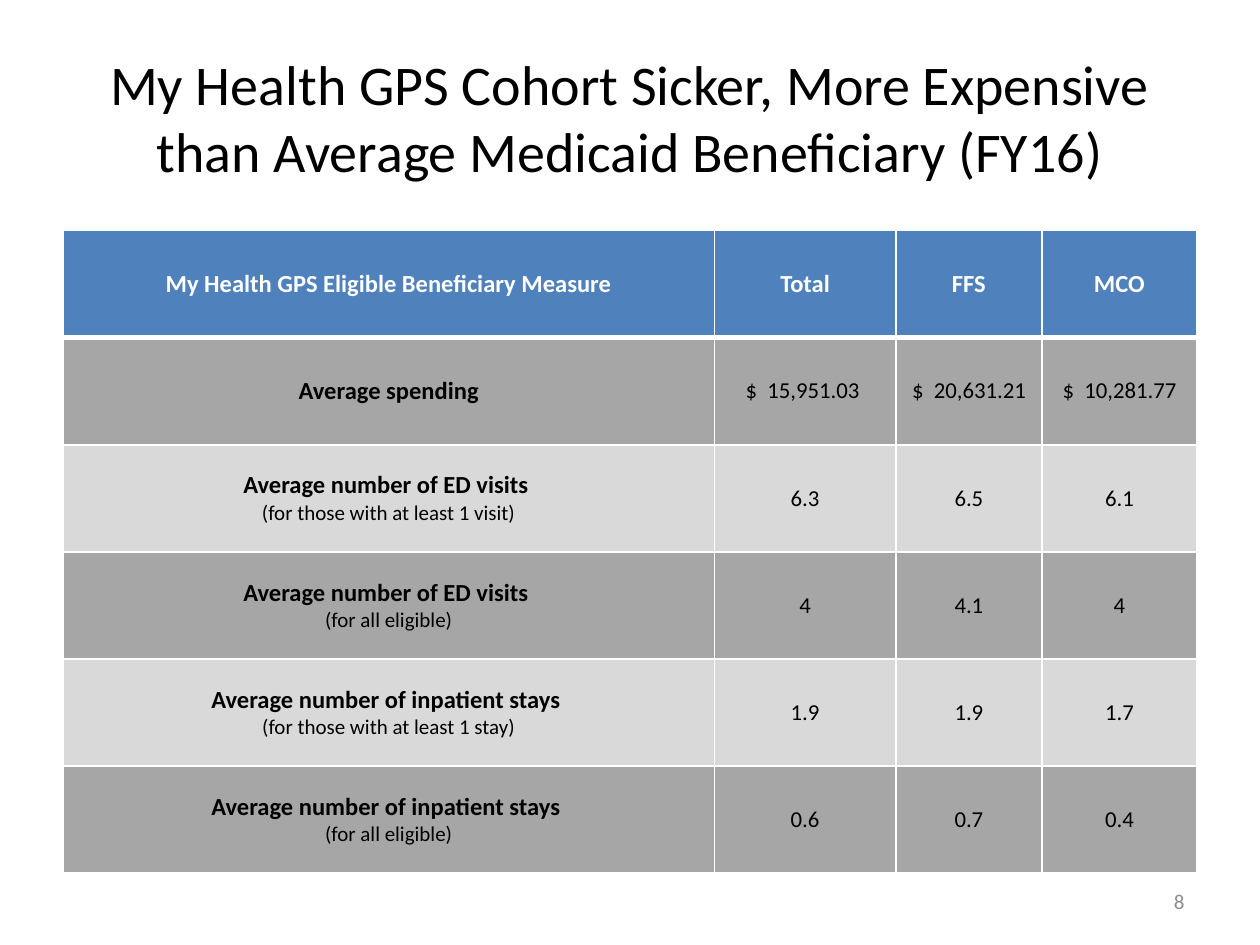
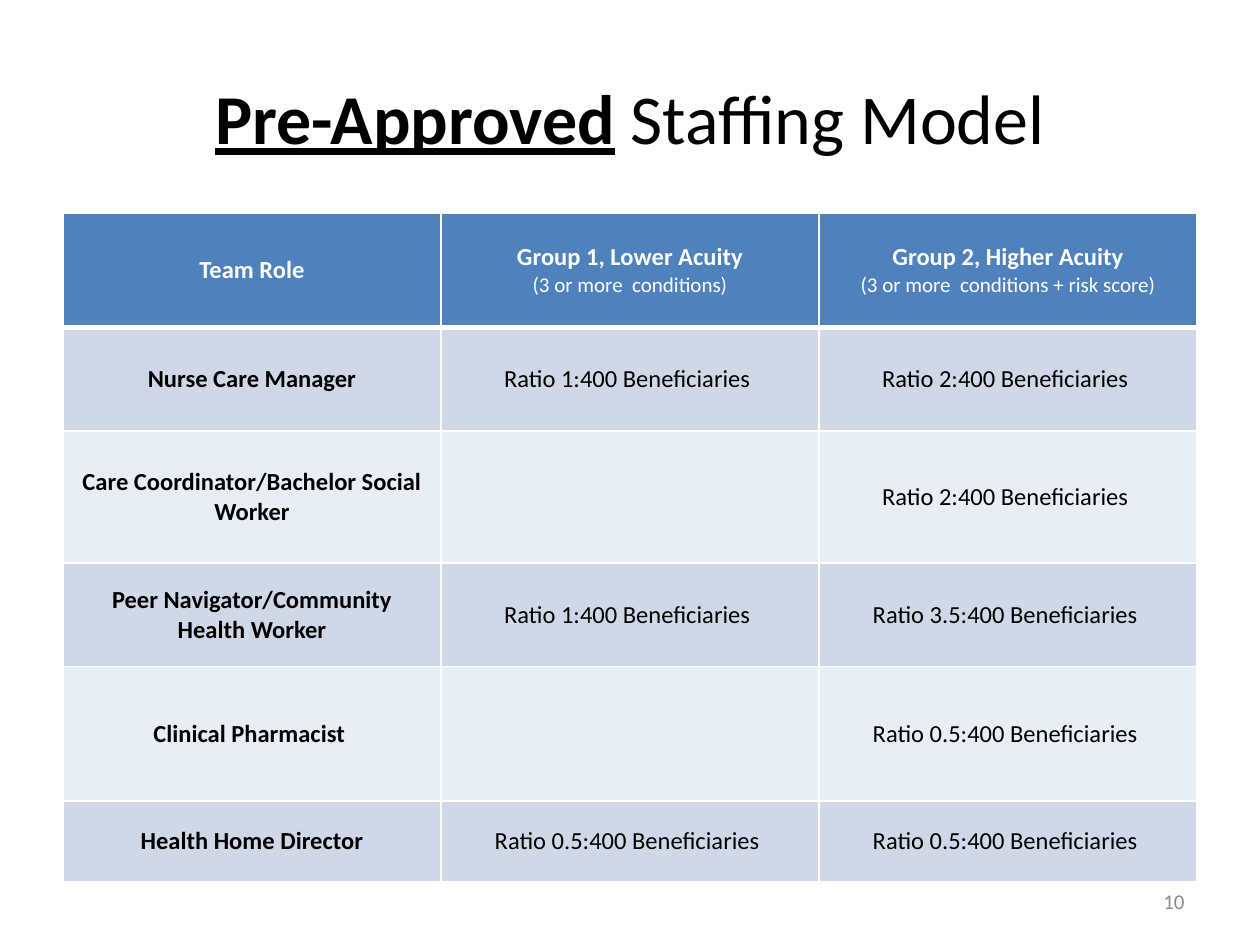
from dataclasses import dataclass

from lxml.etree import SubElement
from pptx import Presentation
from pptx.dml.color import RGBColor
from pptx.enum.text import MSO_ANCHOR, MSO_AUTO_SIZE, PP_ALIGN
from pptx.oxml.ns import qn
from pptx.util import Inches, Pt


@dataclass(frozen=True)
class Theme:
    font: str = "Calibri"
    ink: str = "000000"
    paper: str = "FFFFFF"
    header: str = "4F81BD"
    page_number: str = "8C8C8C"
    gray_bands: tuple = ("A6A6A6", "D9D9D9")
    blue_bands: tuple = ("D0D8E8", "E9EDF4")
    label_size: int = 14
    value_size: int = 13
    note_size: int = 12
    grid_line: int = 1
    header_line: int = 3


THEME = Theme()
TITLE_ONLY = 5

# Each cell is one string; a line after "\n" is its smaller note.
COHORT_ROWS = [
    ["My Health GPS Eligible Beneficiary Measure", "Total", "FFS", "MCO"],
    ["Average spending", "$  15,951.03 ", " $  20,631.21 ", " $  10,281.77 "],
    ["Average number of ED visits \n(for those with at least 1 visit)", "6.3", "6.5", "6.1"],
    ["Average number of ED visits \n(for all eligible)", "4", "4.1", "4"],
    ["Average number of inpatient stays \n(for those with at least 1 stay)", "1.9", "1.9", "1.7"],
    ["Average number of inpatient stays \n(for all eligible)", "0.6", "0.7", "0.4"],
]


def ratio(staff):
    return f"Ratio {staff}:400 Beneficiaries "


STAFFING_ROWS = [
    ["Team Role", "Group 1, Lower Acuity\n(3 or more  conditions)",
     "Group 2, Higher Acuity\n(3 or more  conditions + risk score)"],
    ["Nurse Care Manager", ratio("1"), ratio("2")],
    ["Care Coordinator/Bachelor Social Worker", "", ratio("2")],
    ["Peer Navigator/Community Health Worker", ratio("1"), ratio("3.5")],
    ["Clinical Pharmacist ", "", ratio("0.5")],
    ["Health Home Director", ratio("0.5"), ratio("0.5")],
]


def add_text(paragraph, text, size, color=THEME.ink, bold=False,
             underline=False, align=PP_ALIGN.CENTER):
    """Append one formatted run to a paragraph."""
    paragraph.alignment = align
    run = paragraph.add_run()
    run.text = text
    font = run.font
    font.name, font.size = THEME.font, Pt(size)
    font.bold, font.underline = bold, underline
    font.color.rgb = RGBColor.from_string(color)


def add_title(slide, parts, size):
    """Place the title; each part is (text, emphasised)."""
    title = slide.shapes.title
    title.left, title.top = Inches(0.5), Inches(0.3)
    title.width, title.height = Inches(9), Inches(1.25)
    frame = title.text_frame
    frame.word_wrap = True
    frame.auto_size = MSO_AUTO_SIZE.NONE
    frame.vertical_anchor = MSO_ANCHOR.MIDDLE
    for text, emphasised in parts:
        add_text(frame.paragraphs[0], text, size, bold=emphasised, underline=emphasised)


def add_page_number(slide, number):
    box = slide.shapes.add_textbox(Inches(7.17), Inches(6.95), Inches(2.33), Inches(0.4))
    frame = box.text_frame
    frame.word_wrap = True
    frame.vertical_anchor = MSO_ANCHOR.MIDDLE
    add_text(frame.paragraphs[0], str(number), THEME.note_size,
             color=THEME.page_number, align=PP_ALIGN.RIGHT)


def set_borders(cell, top, bottom):
    """Draw white borders, with the given top and bottom widths in points."""
    properties = cell._tc.get_or_add_tcPr()
    widths = {"a:lnL": THEME.grid_line, "a:lnR": THEME.grid_line,
              "a:lnT": top, "a:lnB": bottom}
    for side, width in widths.items():
        line = SubElement(properties, qn(side), w=str(Pt(width)))
        fill = SubElement(line, qn("a:solidFill"))
        SubElement(fill, qn("a:srgbClr"), val=THEME.paper)


def fill_cell(cell, text, size, color, bold):
    """Write the main line, then any note below it."""
    cell.vertical_anchor = MSO_ANCHOR.MIDDLE
    if not text:
        return
    main_line, *notes = text.split("\n")
    frame = cell.text_frame
    add_text(frame.paragraphs[0], main_line, size, color=color, bold=bold)
    for note in notes:
        add_text(frame.add_paragraph(), note, THEME.note_size, color=color)


def add_banded_table(slide, rows, top, col_widths, row_heights, bands,
                     value_size, margins=None):
    frame = slide.shapes.add_table(len(rows), len(col_widths), Inches(0.5), Inches(top),
                                   Inches(sum(col_widths)), Inches(sum(row_heights)))
    table = frame.table
    for column, width in zip(table.columns, col_widths):
        column.width = Inches(width)
    for row, height in zip(table.rows, row_heights):
        row.height = Inches(height)

    for r, texts in enumerate(rows):
        is_header = r == 0
        background = THEME.header if is_header else bands[(r - 1) % 2]
        for c, text in enumerate(texts):
            cell = table.cell(r, c)
            is_label = is_header or c == 0
            set_borders(cell,
                        top=THEME.header_line if r == 1 else THEME.grid_line,
                        bottom=THEME.header_line if is_header else THEME.grid_line)
            cell.fill.solid()
            cell.fill.fore_color.rgb = RGBColor.from_string(background)
            if margins:
                side, vertical = (Inches(margin) for margin in margins)
                cell.margin_left = cell.margin_right = side
                cell.margin_top = cell.margin_bottom = vertical
            fill_cell(cell, text,
                      size=THEME.label_size if is_label else value_size,
                      color=THEME.paper if is_header else THEME.ink,
                      bold=is_label)


def add_slide(deck, title_parts, title_size, number):
    slide = deck.slides.add_slide(deck.slide_layouts[TITLE_ONLY])
    add_title(slide, title_parts, title_size)
    add_page_number(slide, number)
    return slide


def main():
    deck = Presentation()
    deck.slide_width, deck.slide_height = Inches(10), Inches(7.5)

    # Cohort cost and use
    cohort = add_slide(deck, [("My Health GPS Cohort Sicker, More Expensive "
                               "than Average Medicaid Beneficiary (FY16)", False)], 32, 8)
    add_banded_table(cohort, COHORT_ROWS, top=1.83,
                     col_widths=[5.17, 1.44, 1.16, 1.23], row_heights=[0.85] * 6,
                     bands=THEME.gray_bands, value_size=THEME.value_size,
                     margins=(0.07, 0))

    # Staffing ratios by acuity group
    staffing = add_slide(deck, [("Pre-Approved", True), (" Staffing Model", False)], 40, 10)
    add_banded_table(staffing, STAFFING_ROWS, top=1.69,
                     col_widths=[3] * 3, row_heights=[0.91, 0.82, 1.05, 0.82, 1.07, 0.64],
                     bands=THEME.blue_bands, value_size=THEME.label_size)

    deck.save("out.pptx")


if __name__ == "__main__":
    main()
